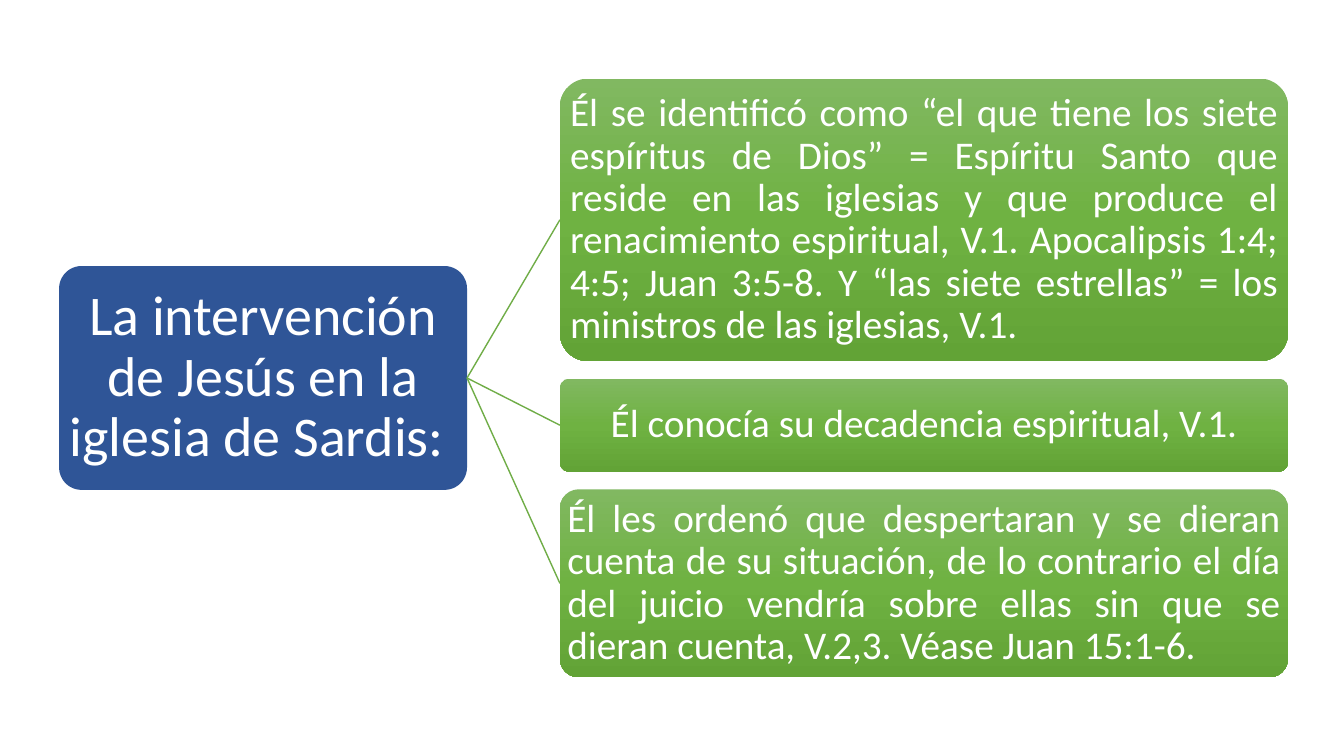
import copy
import dataclasses

import lxml.etree
import pptx
import pptx.dml.color
import pptx.enum.shapes
import pptx.enum.text
import pptx.oxml.ns
import pptx.util

Cm = pptx.util.Cm
ALIGN = pptx.enum.text.PP_ALIGN
SHAPE = pptx.enum.shapes.MSO_SHAPE


@dataclasses.dataclass(frozen=True)
class Theme:
    font: str = "Calibri"
    text: str = "FFFFFF"
    root: str = "2F5597"
    line: str = "70AD47"
    gradient: tuple = ((0, "81B861"), (0.5, "6FB242"), (1, "62A336"))
    root_size: int = 40
    item_size: int = 28


THEME = Theme()
SLIDE_WIDTH, SLIDE_HEIGHT = 33.87, 19.05
ROOT_TEXT = "La intervención de Jesús en la iglesia de Sardis: "
# Text, height in centimetres, alignment
ITEMS = (
    ("Él se identificó como “el que tiene los siete espíritus de Dios” = "
     "Espíritu Santo que reside en las iglesias y que produce el renacimiento "
     "espiritual, V.1. Apocalipsis 1:4; 4:5; Juan 3:5-8. Y “las siete "
     "estrellas” = los ministros de las iglesias, V.1.", 7.12, ALIGN.JUSTIFY),
    ("Él conocía su decadencia espiritual, V.1.", 2.35, ALIGN.CENTER),
    ("Él les ordenó que despertaran y se dieran cuenta de su situación, de lo "
     "contrario el día del juicio vendría sobre ellas sin que se dieran "
     "cuenta, V.2,3. Véase Juan 15:1-6.", 4.74, ALIGN.JUSTIFY),
)
ITEM_GAP = 0.44


def color(value):
    return pptx.dml.color.RGBColor.from_string(value)


def write_text(shape, text, size, alignment=ALIGN.CENTER, inset=0.05):
    frame = shape.text_frame
    frame.word_wrap = True
    frame.auto_size = pptx.enum.text.MSO_AUTO_SIZE.NONE
    frame.vertical_anchor = pptx.enum.text.MSO_ANCHOR.MIDDLE
    frame.margin_left = frame.margin_right = Cm(inset)
    frame.margin_top = frame.margin_bottom = Cm(inset)
    paragraph = frame.paragraphs[0]
    paragraph.alignment = alignment
    paragraph.line_spacing = 0.9
    run = paragraph.add_run()
    run.text = text
    run.font.name = THEME.font
    run.font.size = pptx.util.Pt(size)
    run.font.color.rgb = color(THEME.text)


def add_rounded_box(slide, left, top, width, height):
    shape = slide.shapes.add_shape(SHAPE.ROUNDED_RECTANGLE,
                                   Cm(left), Cm(top), Cm(width), Cm(height))
    shape.adjustments[0] = 0.1
    shape.shadow.inherit = False
    shape.line.fill.background()
    return shape


def fill_gradient(shape):
    shape.fill.gradient()
    shape.fill.gradient_angle = 270
    stop_list = shape.element.spPr.find(".//" + pptx.oxml.ns.qn("a:gsLst"))
    stop_list.insert(1, copy.deepcopy(stop_list[0]))
    for stop, (position, value) in zip(shape.fill.gradient_stops, THEME.gradient):
        stop.position = position
        stop.color.rgb = color(value)


def add_root(slide, left, top, width, height):
    """Blue box with the slide title lying on it."""
    box = add_rounded_box(slide, left, top, width, height)
    box.fill.solid()
    box.fill.fore_color.rgb = color(THEME.root)
    title = slide.shapes.title
    title.left, title.top = box.left, box.top
    title.width, title.height = box.width, box.height
    write_text(title, ROOT_TEXT, THEME.root_size, inset=0.25)
    # Bring the title in front of its box
    title.element.getparent().append(title.element)
    return box


def add_items(slide, left, top, width):
    """Column of green boxes stacked with equal gaps."""
    boxes = []
    for text, height, alignment in ITEMS:
        box = add_rounded_box(slide, left, top, width, height)
        fill_gradient(box)
        write_text(box, text, THEME.item_size, alignment)
        boxes.append(box)
        top += height + ITEM_GAP
    return boxes


def add_branch(slide, root, item):
    """Line from the right side of the root to the left side of an item."""
    branch = slide.shapes.add_connector(
        pptx.enum.shapes.MSO_CONNECTOR.STRAIGHT, 0, 0, 0, 0)
    branch.begin_connect(root, 3)
    branch.end_connect(item, 1)
    branch.line.color.rgb = color(THEME.line)
    branch.line.width = pptx.util.Pt(1)
    lxml.etree.SubElement(branch.element.spPr, pptx.oxml.ns.qn("a:effectLst"))


def build_hierarchy_slide(presentation):
    slide = presentation.slides.add_slide(presentation.slide_layouts[5])
    root_height = 5.64
    items_height = sum(item[1] for item in ITEMS) + ITEM_GAP * (len(ITEMS) - 1)
    # Both columns are centred on the slide's height
    root = add_root(slide, 1.49, (SLIDE_HEIGHT - root_height) / 2,
                    10.28, root_height)
    items = add_items(slide, 14.11, (SLIDE_HEIGHT - items_height) / 2, 18.35)
    for item in items:
        add_branch(slide, root, item)


def main():
    presentation = pptx.Presentation()
    presentation.slide_width = Cm(SLIDE_WIDTH)
    presentation.slide_height = Cm(SLIDE_HEIGHT)
    build_hierarchy_slide(presentation)
    presentation.save("out.pptx")


if __name__ == "__main__":
    main()
